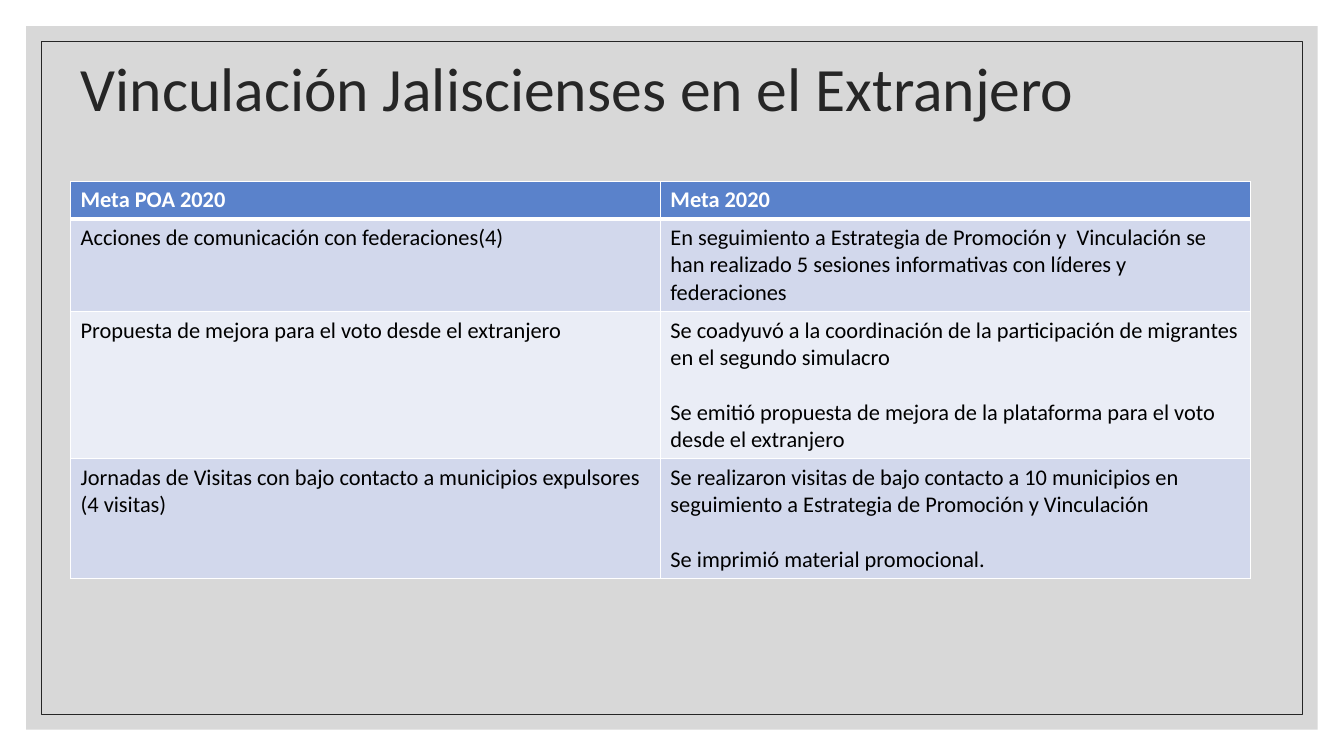
from dataclasses import dataclass

from lxml import etree
from pptx import Presentation
from pptx import util as u
from pptx.dml.color import RGBColor
from pptx.enum import shapes, text
from pptx.oxml import ns

FONT = "Calibri"
COLORS = {
    "panel": "BFBFBF",
    "ink": "262626",
    "header": "5A82CB",
    "band": "D2D8EC",
    "light": "EAEDF6",
    "white": "FFFFFF",
    "black": "000000",
}


@dataclass
class Frame:
    inset: float
    fill: str | None = None
    alpha: int = 100
    line: str | None = None


@dataclass
class Row:
    height: float
    fill: str
    goal: str
    result: list[str]
    color: str = "black"
    bold: bool = False
    bottom: float = 1


FRAMES = [Frame(0.26, fill="panel", alpha=60), Frame(0.41, line="ink")]
ROWS = [
    Row(0.37, "header", "Meta POA 2020", ["Meta 2020"], "white", True, 3),
    Row(0.92, "band", "Acciones de comunicación con federaciones(4)",
        ["En seguimiento a Estrategia de Promoción y  Vinculación se han realizado "
         "5 sesiones informativas con líderes y federaciones"]),
    Row(1.46, "light", "Propuesta de mejora para el voto desde el extranjero",
        ["Se coadyuvó a la coordinación de la participación de migrantes "
         "en el segundo simulacro",
         "Se emitió propuesta de mejora de la plataforma para el voto "
         "desde el extranjero"]),
    Row(1.18, "band",
        "Jornadas de Visitas con bajo contacto a municipios expulsores (4 visitas)",
        ["Se realizaron visitas de bajo contacto a 10 municipios en seguimiento "
         "a Estrategia de Promoción y Vinculación",
         "Se imprimió material promocional."]),
]


def rgb(name: str) -> RGBColor:
    return RGBColor.from_string(COLORS[name])


def style(p, size: float, color: str, bold: bool = False) -> None:
    p.font.name, p.font.size, p.font.bold = FONT, u.Pt(size), bold
    p.font.color.rgb = rgb(color)


def add_frame(prs, s, frame: Frame) -> None:
    edge = u.Inches(frame.inset)
    sp = s.shapes.add_shape(shapes.MSO_SHAPE.RECTANGLE, edge, edge,
                            prs.slide_width - 2 * edge, prs.slide_height - 2 * edge)
    sp.shadow.inherit = False
    if frame.fill:
        sp.fill.solid()
        sp.fill.fore_color.rgb = rgb(frame.fill)
        clr = sp._element.spPr.find(".//" + ns.qn("a:srgbClr"))
        etree.SubElement(clr, ns.qn("a:alpha"), val=str(frame.alpha * 1000))
    else:
        sp.fill.background()
    if frame.line:
        sp.line.color.rgb = rgb(frame.line)
        sp.line.width = u.Pt(0.5)
    else:
        sp.line.fill.background()


def set_borders(cell, top: float, bottom: float) -> None:
    tc_pr = cell._tc.get_or_add_tcPr()
    widths = {"lnL": 1, "lnR": 1, "lnT": top, "lnB": bottom}
    for i, (tag, width) in enumerate(widths.items()):
        ln = etree.Element(ns.qn("a:" + tag), w=str(u.Pt(width)))
        fill = etree.SubElement(ln, ns.qn("a:solidFill"))
        etree.SubElement(fill, ns.qn("a:srgbClr"), val=COLORS["white"])
        tc_pr.insert(i, ln)


def fill_cell(cell, row: Row, lines: list[str], top: float) -> None:
    cell.fill.solid()
    cell.fill.fore_color.rgb = rgb(row.fill)
    set_borders(cell, top, row.bottom)
    tf = cell.text_frame
    tf.text = "\n".join(lines)
    for i, p in enumerate(tf.paragraphs):
        style(p, 16, row.color, row.bold)
        if i:
            p.space_before = u.Pt(19.5)


def add_goals_table(s) -> None:
    height = sum(row.height for row in ROWS)
    tbl = s.shapes.add_table(len(ROWS), 2, u.Inches(0.7), u.Inches(1.8),
                             u.Inches(11.7), u.Inches(height)).table
    top = 1
    for i, row in enumerate(ROWS):
        tbl.rows[i].height = u.Inches(row.height)
        for j, lines in enumerate(([row.goal], row.result)):
            fill_cell(tbl.cell(i, j), row, lines, top)
        top = row.bottom


def set_title(s, title: str) -> None:
    sp = s.shapes.title
    sp.left, sp.top = u.Inches(0.7), u.Inches(0.46)
    sp.width, sp.height = u.Inches(12.17), u.Inches(0.89)
    tf = sp.text_frame
    tf.text = title
    tf.word_wrap = True
    tf.auto_size = text.MSO_AUTO_SIZE.NONE
    tf.vertical_anchor = text.MSO_ANCHOR.MIDDLE
    p = tf.paragraphs[0]
    p.alignment = text.PP_ALIGN.LEFT
    p.line_spacing = 0.9
    style(p, 44, "ink")
    # Bring the title in front of the frames
    s.shapes._spTree.append(sp._element)


def main() -> None:
    prs = Presentation()
    prs.slide_width, prs.slide_height = u.Inches(13.33), u.Inches(7.5)
    s = prs.slides.add_slide(prs.slide_layouts[5])

    # Grey panel and thin inner border
    for frame in FRAMES:
        add_frame(prs, s, frame)

    # Title and table of goals
    set_title(s, "Vinculación Jaliscienses en el Extranjero")
    add_goals_table(s)

    prs.save("out.pptx")


if __name__ == "__main__":
    main()
